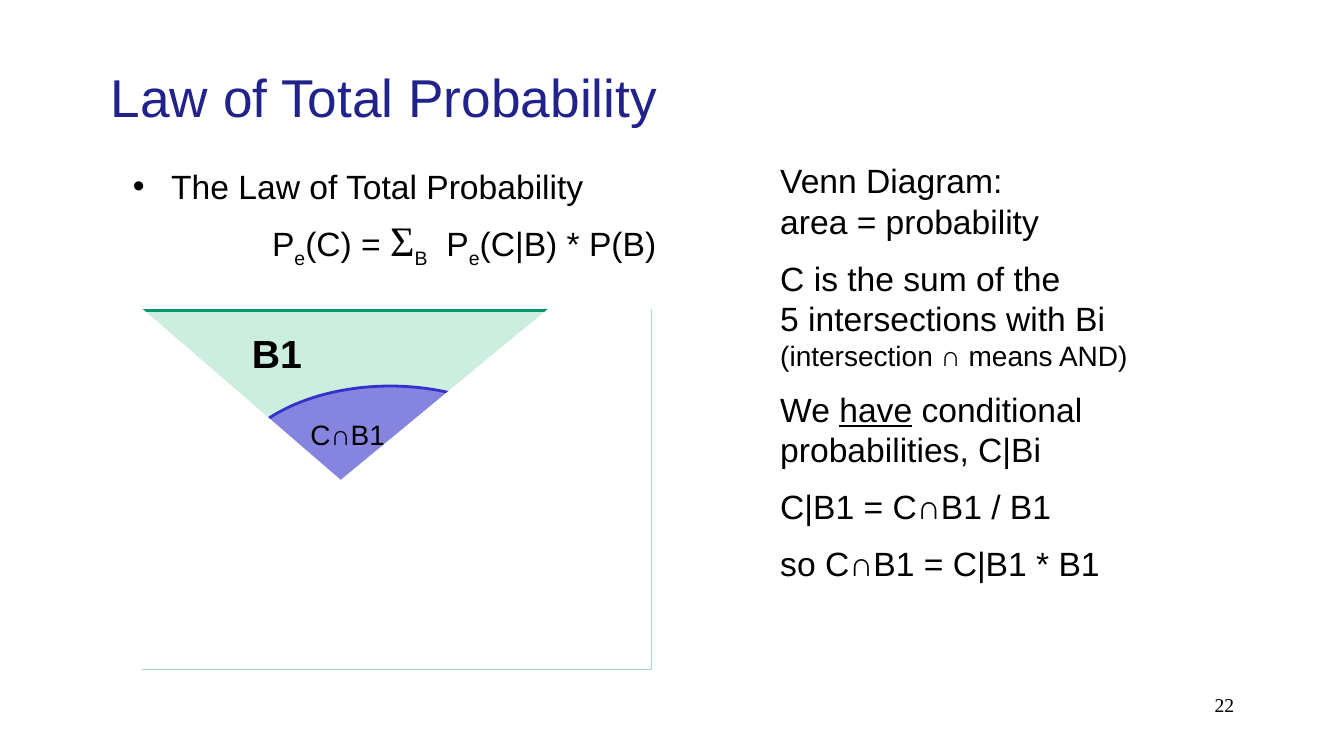
from lxml import etree
from pptx import Presentation
from pptx.dml.color import RGBColor
from pptx.enum.shapes import MSO_SHAPE
from pptx.enum.text import MSO_ANCHOR, PP_ALIGN
from pptx.oxml.ns import qn
from pptx.util import Inches, Pt

RECTANGLE, OVAL = MSO_SHAPE.RECTANGLE, MSO_SHAPE.OVAL
MIDDLE, TOP = MSO_ANCHOR.MIDDLE, MSO_ANCHOR.TOP
LEFT, RIGHT = PP_ALIGN.LEFT, PP_ALIGN.RIGHT

COLORS = {
    "title": "22228B", "text": "000000", "paper": "FFFFFF",
    "b_fill": "CCEEDF", "b_line": "009771",
    "c_fill": "8585E0", "c_line": "3333CC",
}
SUBSCRIPT = {"baseline": "-25000"}


def color(name):
    return RGBColor.from_string(COLORS[name])


def add_paragraph(frame, runs, first=False, before=0, align=LEFT, **font):
    """Add a paragraph of (text, font overrides, XML attributes) runs."""
    paragraph = frame.paragraphs[0] if first else frame.add_paragraph()
    paragraph.space_before = Pt(before)
    paragraph.alignment = align
    for text, overrides, attributes in runs:
        run = paragraph.add_run()
        run.text = text
        style = {"size": Pt(24), "name": "Arial", **font, **overrides}
        ink = style.pop("ink", "text")
        for key, value in style.items():
            setattr(run.font, key, value)
        run.font.color.rgb = color(ink)
        for key, value in attributes.items():
            run.font._element.set(key, value)
    return paragraph


def add_frame(slide, box, anchor=TOP):
    frame = slide.shapes.add_textbox(*map(Inches, box)).text_frame
    frame.word_wrap = True
    frame.vertical_anchor = anchor
    return frame


def add_label(slide, box, text, anchor=TOP, align=LEFT, **font):
    frame = add_frame(slide, box, anchor)
    add_paragraph(frame, [(text, {}, {})], first=True, align=align, **font)


def paint(shape, fill, line, width):
    shape.shadow.inherit = False
    if fill:
        shape.fill.solid()
        shape.fill.fore_color.rgb = color(fill)
    else:
        shape.fill.background()
    shape.line.color.rgb = color(line)
    shape.line.width = Pt(width)


def add_outline(slide, points, fill, line, width):
    start, *rest = [(Inches(x), Inches(y)) for x, y in points]
    builder = slide.shapes.build_freeform(*start)
    builder.add_line_segments(rest, close=False)
    paint(builder.convert_to_shape(), fill, line, width)


def add_law(slide, box):
    frame = add_frame(slide, box)
    law = add_paragraph(frame, [("The Law of Total Probability", {}, {})], first=True)
    properties = law._p.get_or_add_pPr()
    properties.set("marL", str(Inches(0.38)))
    properties.set("indent", str(-Inches(0.38)))
    etree.SubElement(properties, qn("a:buFont")).set("typeface", "Arial")
    etree.SubElement(properties, qn("a:buChar")).set("char", "•")

    formula = add_paragraph(frame, [
        ("P", {}, {}), ("e", {}, SUBSCRIPT), ("(C) = ", {}, {}),
        ("Σ", {"size": Pt(30), "name": "Times New Roman"}, {}),
        ("B", {}, SUBSCRIPT), ("  P", {}, {}), ("e", {}, SUBSCRIPT),
        ("(C|B) * P(B)", {}, {}),
    ], before=6)
    formula._p.get_or_add_pPr().set("marL", str(Inches(1.38)))


def add_venn(slide, box):
    """Draw the wedge B1 with its part of C; a paper-coloured outline trims both."""
    left, top, width, height = box
    right, bottom = left + width, top + height
    apex = (left + 1.97, top + 1.7)
    wedge_right = left + 4.03

    def add_area(preset, area, fill, line):
        shape = slide.shapes.add_shape(preset, *map(Inches, area))
        paint(shape, fill, line, 2)

    add_area(RECTANGLE, box, "b_fill", "b_line")
    add_label(slide, (left + 0.99, top + 0.14, 1.04, 0.57), "B1", size=Pt(28), bold=True)
    add_area(OVAL, (left + 0.82, top + 0.75, 3.28, 1.99), "c_fill", "c_line")
    add_label(slide, (left + 1.57, top + 1.01, 1, 0.44), "C∩B1", size=Pt(20))
    add_outline(slide, [(left, top), apex, (wedge_right, top)], None, "text", 1)
    add_outline(slide, [
        (left, top), (left, bottom), (right, bottom), (right, top),
        (wedge_right, top), apex, (left, top),
    ], "paper", "paper", 2)


def add_explanation(slide, box):
    frame = add_frame(slide, box)
    lines = [
        (0, [("Venn Diagram:", {}, {})]),
        (0, [("area = probability", {}, {})]),
        (12, [("C is the sum of the\v5 intersections with Bi\v", {}, {}),
              ("(intersection ∩ means AND)", {"size": Pt(20)}, {})]),
        (12, [("We ", {}, {}), ("have", {"underline": True}, {}),
              (" conditional probabilities, C|Bi", {}, {})]),
        (12, [("C|B1 = C∩B1 / B1", {}, {})]),
        (12, [("so C∩B1 = C|B1 * B1", {}, {})]),
    ]
    for index, (before, runs) in enumerate(lines):
        # A vertical tab in a run becomes a line break between runs
        paragraph = add_paragraph(frame, [], first=index == 0, before=before)
        for text, overrides, attributes in runs:
            pieces = text.split("\v")
            for number, piece in enumerate(pieces):
                if number:
                    paragraph.add_line_break()
                if piece:
                    run = paragraph.add_run()
                    run.text = piece
                    style = {"size": Pt(24), "name": "Arial", **overrides}
                    for key, value in style.items():
                        setattr(run.font, key, value)
                    run.font.color.rgb = color("text")


def main():
    deck = Presentation()
    deck.slide_width, deck.slide_height = Inches(13.33), Inches(7.5)
    slide = deck.slides.add_slide(deck.slide_layouts[6])
    add_law(slide, (1.22, 1.6, 6, 1.3))
    add_venn(slide, (1.41, 3.08, 5.04, 3.55))
    add_label(slide, (9.56, 6.83, 2.78, 0.5), "22", align=RIGHT,
              size=Pt(14), name="Times New Roman")
    add_explanation(slide, (7.64, 1.54, 3.84, 4.91))
    add_label(slide, (1, 0.33, 11.33, 1.25), "Law of Total Probability",
              anchor=MIDDLE, size=Pt(38), ink="title")
    deck.save("out.pptx")


if __name__ == "__main__":
    main()
